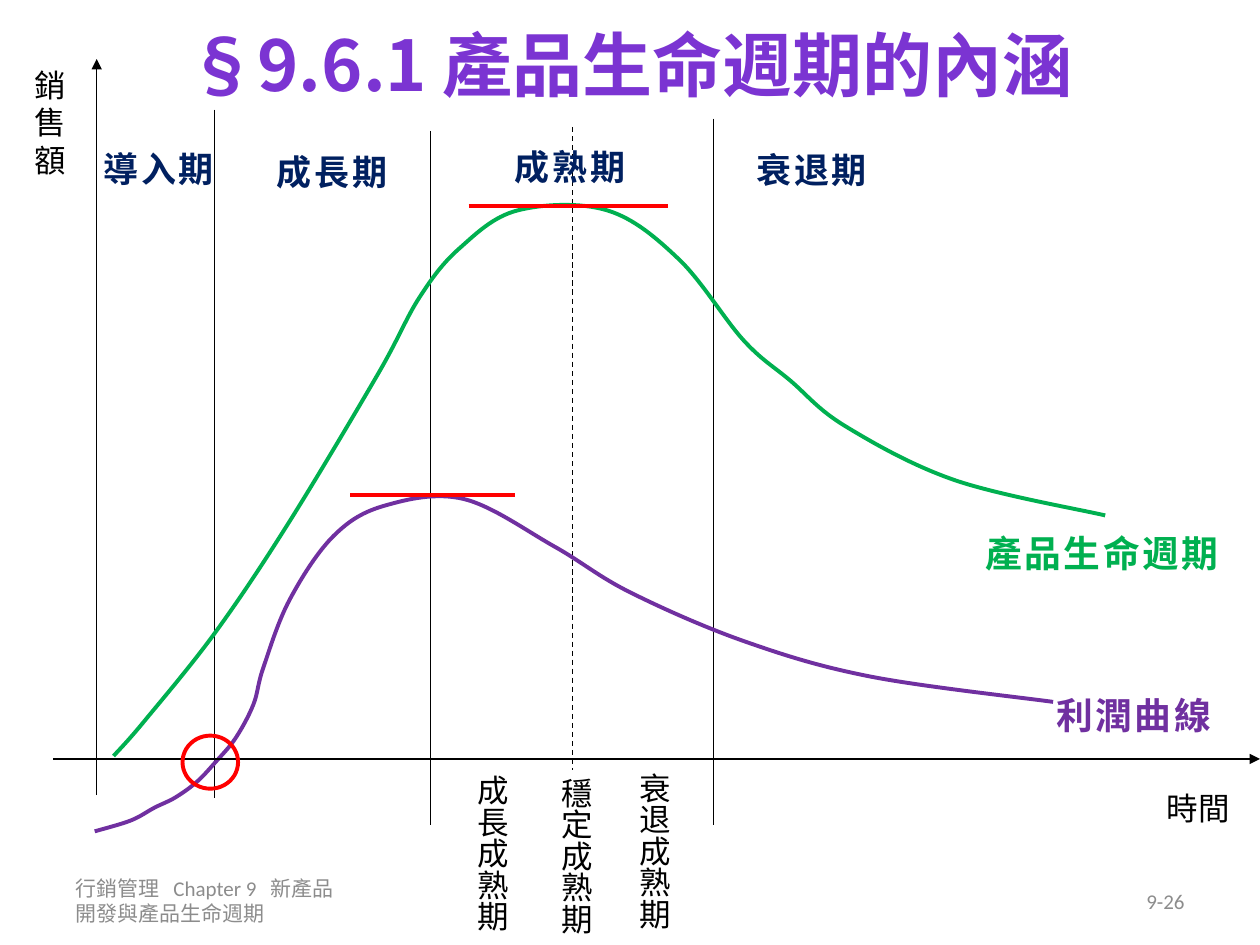
import pptx
import pptx.util
import pptx.dml.color
import pptx.enum.dml
import pptx.enum.shapes
import pptx.enum.text
import pptx.oxml
import pptx.oxml.ns

Cm, Pt = pptx.util.Cm, pptx.util.Pt
ALIGN, ANCHOR = pptx.enum.text.PP_ALIGN, pptx.enum.text.MSO_ANCHOR
CJK = "Noto Sans CJK SC"
BLACK, RED, NAVY, GREEN, PURPLE, GRAY = "000000", "FF0000", "002060", "00B050", "7030A0", "8C8C8C"

# Content: lengths in cm, boxes as left, top, width, height
TITLE = "§9.6.1 產品生命週期的內涵"
TITLE_STOPS = [(0, "3D1B67"), (43, "7B34D2"), (48, "7330C4"), (100, "3D1B67")]
FOOTERS = [
    ("行銷管理   Chapter 9   新產品開發與產品生命週期", 1.27, ALIGN.LEFT),
    ("9-26", 18.21, ALIGN.RIGHT),
]
STAGES = [
    ("導入期", (1.84, 2.84, 2.92, 1.12)),
    ("成長期", (5.33, 2.9, 4.01, 1.12)),
    ("成熟期", (10.13, 2.81, 4.01, 1.12)),
    ("衰退期", (15, 2.87, 4.01, 1.12)),
]
MATURITY_PHASES = [
    ("成長成熟期", 9.15, 15.37),
    ("穩定成熟期", 10.86, 15.42),
    ("衰退成熟期", 12.43, 15.32),
]
AXIS_LABELS = [
    ("銷售額", (0.44, 1.2, 1.24, 2.57), True),
    ("時間", (23.27, 15.79, 1.78, 1.02), False),
]
CURVES = [
    ("產品生命週期", GREEN, (19.61, 10.57, 5.31, 1.14), [
        (2.29, 15.24), (2.9, 14.55), (4.34, 12.75), (5.82, 10.54), (7.62, 7.54),
        (8.46, 5.99), (9.27, 5), (10.44, 4.24), (12.24, 4.24), (13.69, 5.23),
        (14.99, 6.86), (15.93, 7.67), (17.04, 8.59), (19.25, 9.68), (22.28, 10.39)]),
    ("利潤曲線", PURPLE, (21.04, 13.84, 3.96, 2.06), [
        (1.91, 16.76), (2.64, 16.54), (3.12, 16.28), (3.53, 16.08), (3.96, 15.77),
        (4.34, 15.37), (4.75, 14.88), (5.11, 14.2), (5.31, 13.46), (5.84, 12.09),
        (6.73, 10.8), (7.77, 10.19), (9.35, 10.06), (11.18, 11.02), (12.7, 11.94),
        (15.01, 12.93), (17.55, 13.64), (21.23, 14.15)]),
]
# Vertical dividers: x, top, bottom, dashed
DIVIDERS = [
    (4.32, 2.21, 16.08, False),
    (8.68, 2.64, 16.64, False),
    (14.38, 2.39, 16.64, False),
    (11.54, 2.56, 15.52, True),
]
PEAKS = [(7.06, 10.39, 9.98), (9.45, 13.46, 4.16)]  # left, right, y
AXES = [(1.95, 16.03, 1.95, 1.19), (1.07, 15.3, 25.4, 15.3)]
BREAK_EVEN = (3.68, 14.83, 1.12, 1.07)

deck = pptx.Presentation()
deck.slide_width, deck.slide_height = Cm(25.4), Cm(19.05)
page = deck.slides.add_slide(deck.slide_layouts[6])


def color(value):
    return pptx.dml.color.RGBColor.from_string(value)


def xml(tag, inner="", **attributes):
    names = " ".join(f'{key}="{value}"' for key, value in attributes.items())
    return pptx.oxml.parse_xml(
        f'<a:{tag} {pptx.oxml.ns.nsdecls("a")} {names}>{inner}</a:{tag}>')


def add_text(text, place, size=18, ink=BLACK, font=CJK, bold=False, spacing=0,
             align=ALIGN.LEFT, anchor=ANCHOR.TOP, wrap=True, grow=True, vertical=False):
    box = page.shapes.add_textbox(*map(Cm, place))
    frame = box.text_frame
    frame.word_wrap, frame.vertical_anchor = wrap, anchor
    if grow:
        frame.auto_size = pptx.enum.text.MSO_AUTO_SIZE.SHAPE_TO_FIT_TEXT
    if vertical:
        box.element.txBody.bodyPr.set("vert", "eaVert")
    para = frame.paragraphs[0]
    para.alignment = align
    span = para.add_run()
    span.text = text
    span.font.size, span.font.bold, span.font.name = Pt(size), bold, font
    span.font.color.rgb = color(ink)
    properties = span.font._element
    properties.append(xml("ea", typeface=CJK))
    if spacing:
        properties.set("spc", str(int(spacing * 100)))
    return span


def add_line(ends, ink=BLACK, width=0.75, dashed=False, arrow=False):
    line = page.shapes.add_connector(
        pptx.enum.shapes.MSO_CONNECTOR.STRAIGHT, *map(Cm, ends))
    line.line.color.rgb, line.line.width = color(ink), Pt(width)
    if dashed:
        line.line.dash_style = pptx.enum.dml.MSO_LINE.DASH
    if arrow:
        line.line._get_or_add_ln().append(xml("tailEnd", type="triangle"))
    line.element.spPr.append(xml("effectLst"))


def outline(shape, ink):
    shape.shadow.inherit = False
    shape.fill.background()
    shape.line.color.rgb, shape.line.width = color(ink), Pt(2.25)


def add_curve(knots, ink):
    """Smooth curve through the knots: two handles and an end per Bezier piece."""
    padded = [knots[0], *knots, knots[-1]]
    points = []
    for before, start, end, after in zip(padded, padded[1:], padded[2:], padded[3:]):
        points.append([s + (e - b) / 6 for b, s, e in zip(before, start, end)])
        points.append([e - (a - s) / 6 for s, e, a in zip(start, end, after)])
        points.append(end)
    builder = page.shapes.build_freeform(*map(Cm, knots[0]))
    builder.add_line_segments([(Cm(x), Cm(y)) for x, y in points], close=False)
    shape = builder.convert_to_shape()
    # Join each three straight segments into one Bezier piece
    segments = list(shape.element.iter(pptx.oxml.ns.qn("a:lnTo")))
    for first, second, third in zip(segments[::3], segments[1::3], segments[2::3]):
        piece = xml("cubicBezTo")
        first.addprevious(piece)
        for segment in (first, second, third):
            piece.append(segment[0])
            segment.getparent().remove(segment)
    outline(shape, ink)


# Title with gradient letters and a thin outline
title = add_text(TITLE, (1.27, 0, 22.86, 2.57), size=40, bold=True,
                 align=ALIGN.CENTER, anchor=ANCHOR.MIDDLE, grow=False)
stops = "".join(f'<a:gs pos="{position * 1000}"><a:srgbClr val="{ink}"/></a:gs>'
                for position, ink in TITLE_STOPS)
title.font.fill.gradient()
letters = title.font._element
letters.replace(letters.find(pptx.oxml.ns.qn("a:gradFill")),
                xml("gradFill", f'<a:gsLst>{stops}</a:gsLst><a:lin ang="5400000"/>'))
letters.insert(0, xml("ln", '<a:solidFill><a:srgbClr val="5E457C"/></a:solidFill>', w=9000))

# Footer
for text, left, align in FOOTERS:
    add_text(text, (left, 17.65, 5.92, 1.02), size=12, ink=GRAY, font="Calibri",
             align=align, anchor=ANCHOR.MIDDLE, grow=False)

# Stage dividers and maturity phases
for x, top, bottom, dashed in DIVIDERS:
    add_line((x, top, x, bottom), dashed=dashed)
for text, left, top in MATURITY_PHASES:
    add_text(text, (left, top, 1.27, 3.73), vertical=True)

# Curves with their names
for name, ink, place, knots in CURVES:
    add_curve(knots, ink)
    add_text(name, place, size=21, ink=ink, bold=True, spacing=1.5)

# Stage names
for text, place in STAGES:
    add_text(text, place, size=20, ink=NAVY, bold=True, spacing=1.5)

# Peaks, axes and break-even mark
for left, right, y in PEAKS:
    add_line((left, y, right, y), ink=RED, width=2.25)
for ends in AXES:
    add_line(ends, arrow=True)
outline(page.shapes.add_shape(pptx.enum.shapes.MSO_SHAPE.OVAL, *map(Cm, BREAK_EVEN)), RED)
for text, place, wrap in AXIS_LABELS:
    add_text(text, place, wrap=wrap)

deck.save("out.pptx")
